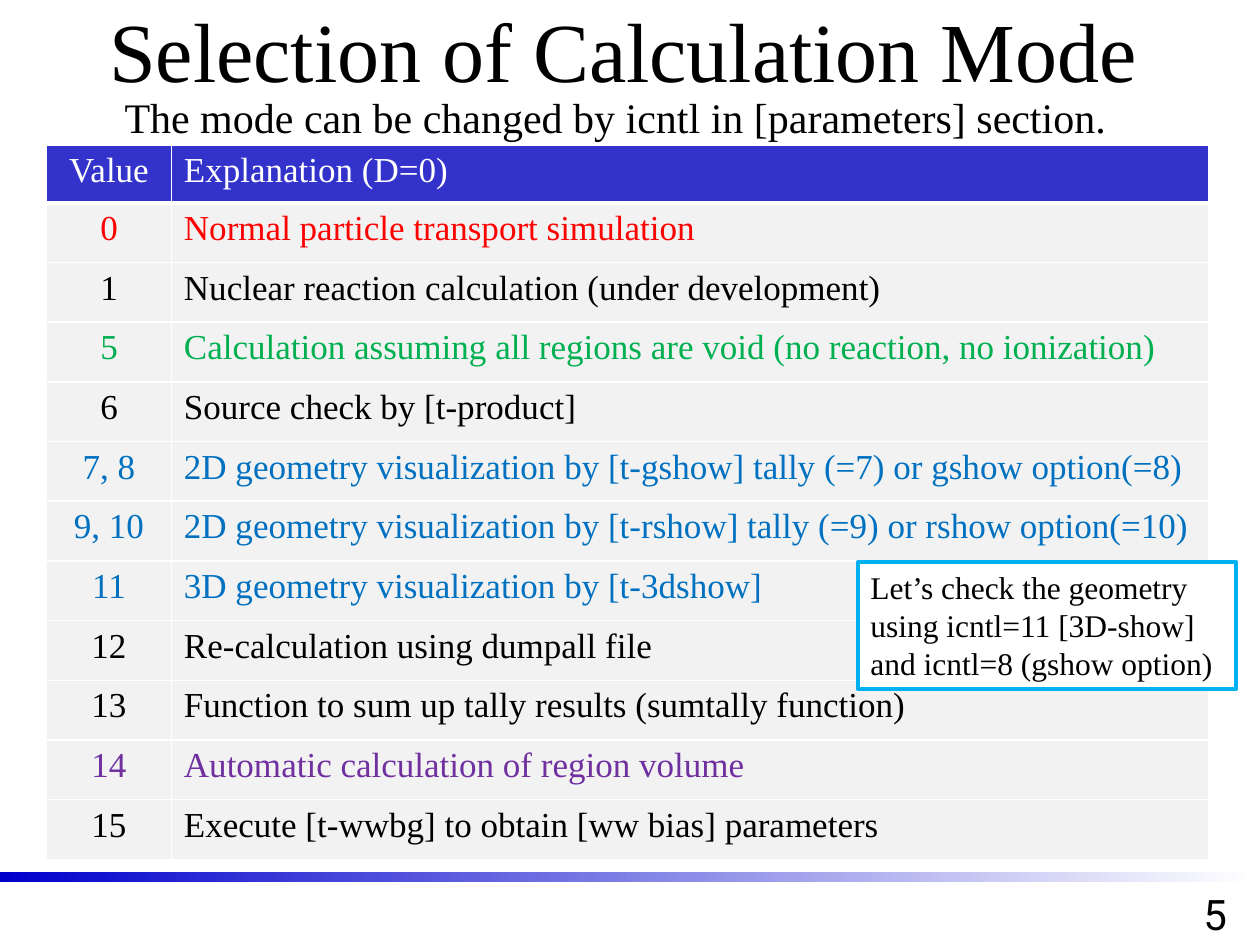
from dataclasses import dataclass

from lxml import etree
from pptx import Presentation
from pptx import util as u
from pptx.dml.color import RGBColor
from pptx.enum import shapes, text
from pptx.oxml.ns import qn


@dataclass(frozen=True)
class Theme:
    """Colours, fonts and type sizes of the slide."""
    serif: str = "Times New Roman"
    sans: str = "Roboto"
    title: int = 48
    subtitle: int = 24
    body: int = 20
    note: int = 18
    black: str = "000000"
    white: str = "FFFFFF"
    header: str = "3333CC"
    band: str = "F2F2F2"
    bar: str = "0000CC"
    frame: str = "00B0F0"
    red: str = "FF0000"
    green: str = "00B050"
    blue: str = "0070C0"
    purple: str = "7030A0"


THEME = Theme()
LEFT, CENTER = text.PP_ALIGN.LEFT, text.PP_ALIGN.CENTER
TOP, MIDDLE = text.MSO_ANCHOR.TOP, text.MSO_ANCHOR.MIDDLE

MODES = [
    ("0", "Normal particle transport simulation", THEME.red),
    ("1", "Nuclear reaction calculation (under development)", THEME.black),
    ("5", "Calculation assuming all regions are void (no reaction, no ionization)", THEME.green),
    ("6", "Source check by [t-product]", THEME.black),
    ("7, 8", "2D geometry visualization by [t-gshow] tally (=7) or gshow option(=8)", THEME.blue),
    ("9, 10", "2D geometry visualization by [t-rshow] tally (=9) or rshow option(=10)", THEME.blue),
    ("11", "3D geometry visualization by [t-3dshow]", THEME.blue),
    ("12", "Re-calculation using dumpall file", THEME.black),
    ("13", "Function to sum up tally results (sumtally function)", THEME.black),
    ("14", "Automatic calculation of region volume", THEME.purple),
    ("15", "Execute [t-wwbg] to obtain [ww bias] parameters", THEME.black),
]


def inches(box):
    """Convert a left, top, width, height box to lengths."""
    return [u.Inches(length) for length in box]


def write(frame, words, size, color=THEME.black, align=LEFT, font=THEME.serif):
    """Write one formatted paragraph into a text frame."""
    paragraph = frame.paragraphs[0]
    paragraph.alignment = align
    run = paragraph.add_run()
    run.text = words
    for name, value in {"name": font, "size": u.Pt(size)}.items():
        setattr(run.font, name, value)
    run.font.color.rgb = RGBColor.from_string(color)


def add_label(slide, box, words, size, wrap=True, anchor=TOP, **style):
    """Place a line of text in the given box."""
    frame = slide.shapes.add_textbox(*inches(box)).text_frame
    for name, value in {"word_wrap": wrap, "vertical_anchor": anchor}.items():
        setattr(frame, name, value)
    write(frame, words, size, **style)


def add_rectangle(slide, box):
    """Place a rectangle without a shadow."""
    rectangle = slide.shapes.add_shape(shapes.MSO_SHAPE.RECTANGLE, *inches(box))
    rectangle.shadow.inherit = False
    return rectangle


def add_footer_bar(slide, box):
    """Place the bar that fades from blue to white."""
    bar = add_rectangle(slide, box)
    bar.line.fill.background()
    bar.fill.gradient()
    bar.fill.gradient_angle = 0
    for stop, position, color in zip(bar.fill.gradient_stops, (0, 1), (THEME.bar, THEME.white)):
        stop.position = position
        stop.color.rgb = RGBColor.from_string(color)


def set_borders(cell, widths):
    """Draw white cell borders with a width in points for each side."""
    properties = cell._tc.get_or_add_tcPr()
    for index, (side, width) in enumerate(widths.items()):
        line = etree.Element(qn(f"a:ln{side}"), w=str(u.Pt(width)))
        solid = etree.SubElement(line, qn("a:solidFill"))
        etree.SubElement(solid, qn("a:srgbClr"), val=THEME.white)
        properties.insert(index, line)


def add_mode_table(slide, box, value_width, header_height):
    """Place the table of modes, sharing the height below its header equally."""
    rows = [("Value", "Explanation (D=0)", THEME.white), *MODES]
    table = slide.shapes.add_table(len(rows), 2, *inches(box)).table
    for column, width in zip(table.columns, (value_width, box[2] - value_width)):
        column.width = u.Inches(width)
    mode_height = (box[3] - header_height) / len(MODES)
    for index, (value, explanation, color) in enumerate(rows):
        is_header = index == 0
        table.rows[index].height = u.Inches(header_height if is_header else mode_height)
        fill = THEME.header if is_header else THEME.band
        borders = {"L": 1, "R": 1, "T": 3 if index == 1 else 1, "B": 3 if is_header else 1}
        for cell, words, align in zip(table.rows[index].cells, (value, explanation), (CENTER, LEFT)):
            cell.fill.solid()
            cell.fill.fore_color.rgb = RGBColor.from_string(fill)
            set_borders(cell, borders)
            write(cell.text_frame, words, THEME.body, color, align)


def add_callout(slide, box, words):
    """Place the framed hint over the table."""
    callout = add_rectangle(slide, box)
    callout.fill.solid()
    callout.fill.fore_color.rgb = RGBColor.from_string(THEME.white)
    callout.line.color.rgb = RGBColor.from_string(THEME.frame)
    callout.line.width = u.Pt(2.25)
    frame = callout.text_frame
    for name, value in {"word_wrap": True, "vertical_anchor": TOP}.items():
        setattr(frame, name, value)
    write(frame, words, THEME.note)


def build_mode_slide(deck):
    """Build the slide about the calculation modes."""
    slide = deck.slides.add_slide(deck.slide_layouts[6])
    add_footer_bar(slide, (0, 6.92, 9.96, 0.08))
    add_label(slide, (9.25, 7, 0.79, 0.5), "5", THEME.subtitle, align=CENTER, font=THEME.sans)
    add_mode_table(slide, (0.37, 1.15, 9.22, 5.67), 0.99, 0.46)
    add_label(slide, (0.89, 0.68, 8.06, 0.51),
              "The mode can be changed by icntl in [parameters] section.", THEME.subtitle, wrap=False)
    add_callout(slide, (6.81, 4.46, 3, 1.01),
                "Let’s check the geometry using icntl=11 [3D-show] and icntl=8 (gshow option)")
    add_label(slide, (0.2, -0.19, 9.5, 1.15), "Selection of Calculation Mode", THEME.title,
              anchor=MIDDLE, align=CENTER)


def main():
    """Create and save the deck."""
    deck = Presentation()
    deck.slide_width, deck.slide_height = u.Inches(10), u.Inches(7.5)
    build_mode_slide(deck)
    deck.save("out.pptx")


if __name__ == "__main__":
    main()
